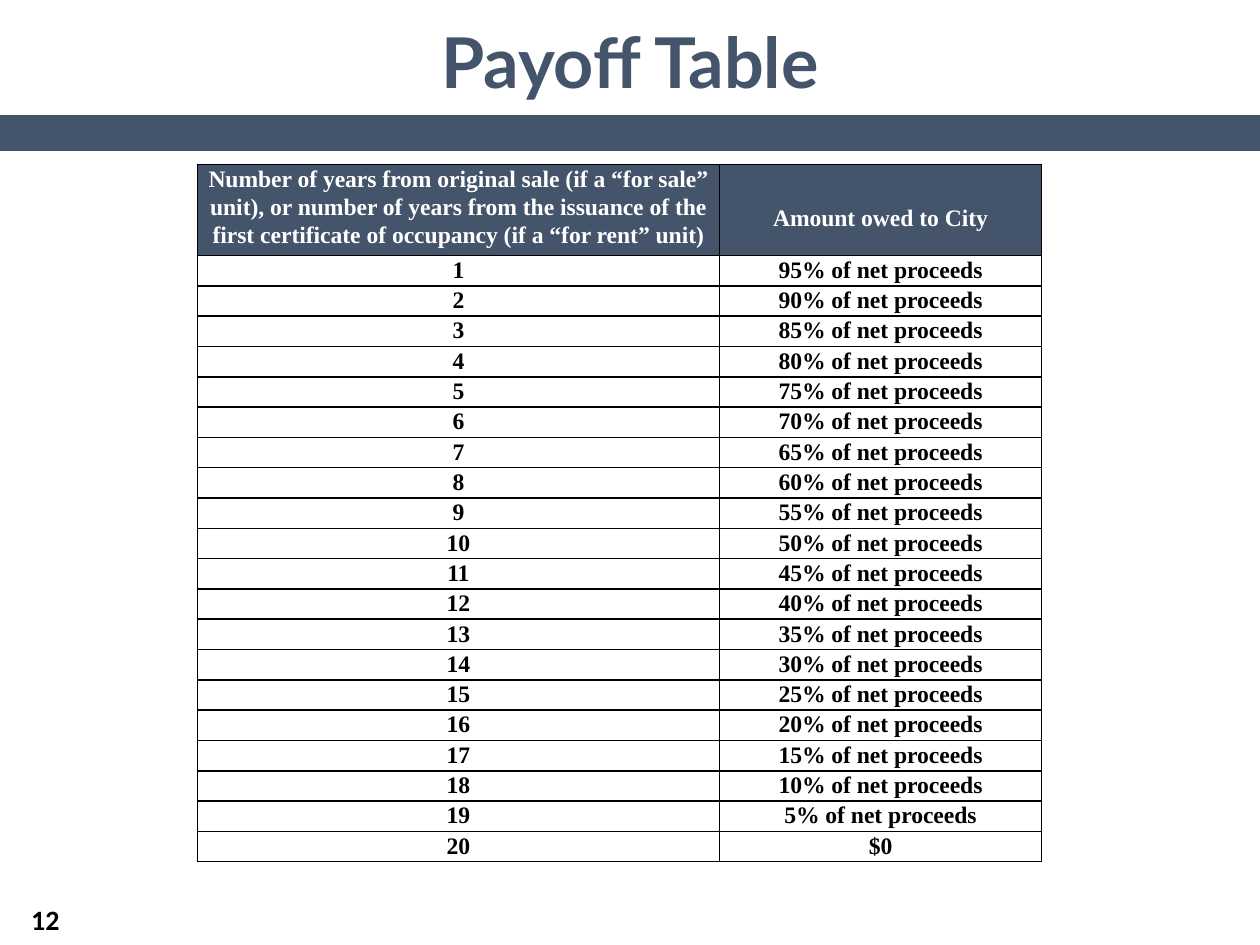
"""Build the payoff table slide."""
import dataclasses

import pptx
import pptx.dml.color
import pptx.enum.shapes
import pptx.enum.text
import pptx.oxml
import pptx.oxml.ns
import pptx.util

Cm = pptx.util.Cm
Pt = pptx.util.Pt
RGB = pptx.dml.color.RGBColor.from_string
ALIGN = pptx.enum.text.PP_ALIGN
ANCHOR = pptx.enum.text.MSO_ANCHOR


@dataclasses.dataclass(frozen=True)
class Theme:
    """Colours, fonts and type sizes of the slide."""
    slate: str = "44546A"
    white: str = "FFFFFF"
    black: str = "000000"
    head: str = "Lato"
    body: str = "Times New Roman"
    plain: str = "Calibri"
    large: float = 40
    page: float = 16
    small: float = 13.5


THEME = Theme()
HEADS = (
    "Number of years from original sale (if a “for sale” unit), or number of "
    "years from the issuance of the first certificate of occupancy "
    "(if a “for rent” unit)",
    "Amount owed to City",
)
YEARS = 20


def assign(item, values):
    """Set each named attribute of an item."""
    for name, value in values.items():
        setattr(item, name, value)


def place(shape, left, top, width, height):
    """Move and size a shape, in centimetres."""
    assign(shape, {"left": Cm(left), "top": Cm(top),
                   "width": Cm(width), "height": Cm(height)})


def write(frame, text, face, size, color, align=ALIGN.CENTER, space=1.0):
    """Write one bold paragraph into a text frame."""
    frame.word_wrap = True
    para = frame.paragraphs[0]
    assign(para, {"alignment": align, "line_spacing": space})
    run = para.add_run()
    run.text = text
    assign(run.font, {"name": face, "size": Pt(size), "bold": True})
    run.font.color.rgb = RGB(color)


def title(slide, text):
    """Fill the title placeholder."""
    shape = slide.shapes.title
    place(shape, 0, 0, 25.4, 2.34)
    frame = shape.text_frame
    sides = ("left", "right", "top", "bottom")
    assign(frame, {f"margin_{side}": Cm(0.25) for side in sides})
    frame.auto_size = pptx.enum.text.MSO_AUTO_SIZE.NONE
    frame.vertical_anchor = ANCHOR.BOTTOM
    write(frame, text, THEME.head, THEME.large, THEME.slate, space=0.9)


def band(slide):
    """Draw the full-width band below the title."""
    kind = pptx.enum.shapes.MSO_SHAPE.RECTANGLE
    shape = slide.shapes.add_shape(kind, 0, Cm(2.34), Cm(25.4), Cm(0.69))
    shape.shadow.inherit = False
    shape.fill.solid()
    shape.fill.fore_color.rgb = RGB(THEME.slate)
    shape.line.color.rgb = RGB(THEME.slate)
    shape.line.width = Pt(1)


def number(slide, text):
    """Add the page number."""
    box = slide.shapes.add_textbox(Cm(0.38), Cm(18.03), Cm(1.37), Cm(1.02))
    box.text_frame.vertical_anchor = ANCHOR.MIDDLE
    write(box.text_frame, text, THEME.plain, THEME.page, THEME.black,
          align=ALIGN.LEFT)


def border(cell):
    """Rule all four sides of a cell."""
    props = cell._tc.get_or_add_tcPr()
    space = pptx.oxml.ns.nsdecls("a")
    for side in "LRTB":
        props.append(pptx.oxml.parse_xml(
            f'<a:ln{side} {space} w="{Pt(1)}"><a:solidFill>'
            f'<a:srgbClr val="{THEME.black}"/></a:solidFill></a:ln{side}>'))


def entry(cell, text, header):
    """Format and fill one table cell."""
    assign(cell, {"margin_left": Cm(0.18), "margin_right": Cm(0.18),
                  "margin_top": 0, "margin_bottom": 0,
                  "vertical_anchor": ANCHOR.TOP})
    border(cell)
    if header:
        cell.fill.solid()
        cell.fill.fore_color.rgb = RGB(THEME.slate)
    else:
        cell.fill.background()
    color = THEME.white if header else THEME.black
    write(cell.text_frame, text, THEME.body, THEME.small, color, space=1.07)


def payoff(slide):
    """Add the table of shares owed by year."""
    rows = [HEADS]
    for year in range(1, YEARS + 1):
        share = 100 - 5 * year
        rows.append((str(year), f"{share}% of net proceeds" if share else "$0"))
    widths = (10.52, 6.5)
    heights = [1.75] + [0.58] * YEARS
    grid = slide.shapes.add_table(
        len(rows), len(widths), Cm(3.98), Cm(3.32),
        Cm(sum(widths)), Cm(sum(heights))).table
    for col, width in zip(grid.columns, widths):
        col.width = Cm(width)
    for index, (row, height) in enumerate(zip(grid.rows, heights)):
        row.height = Cm(height)
        for cell, text in zip(row.cells, rows[index]):
            entry(cell, text, index == 0)
    grid.cell(0, 1).margin_top = Cm(0.79)


def main():
    """Build and save the slide."""
    deck = pptx.Presentation()
    assign(deck, {"slide_width": Cm(25.4), "slide_height": Cm(19.05)})
    slide = deck.slides.add_slide(deck.slide_layouts.get_by_name("Title Only"))
    number(slide, "12")
    band(slide)
    payoff(slide)
    title(slide, "Payoff Table")
    deck.save("out.pptx")


if __name__ == "__main__":
    main()
